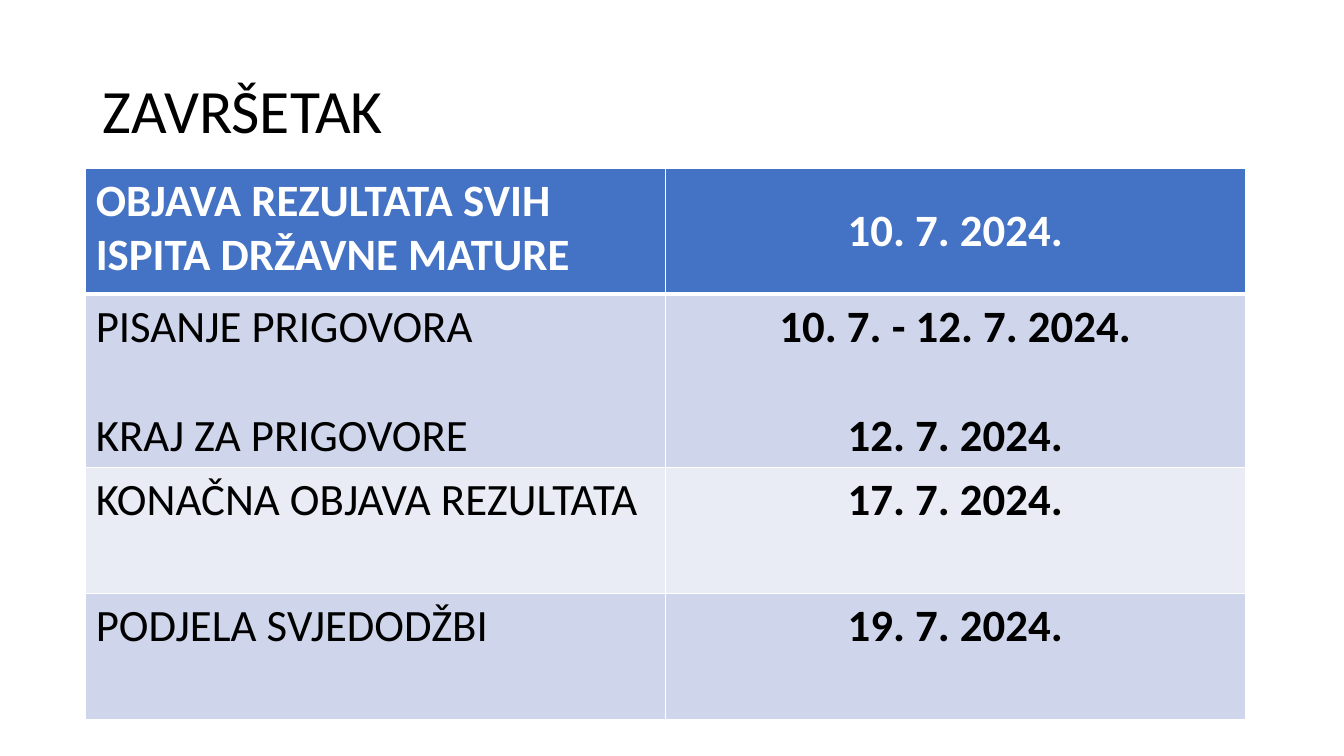
from lxml.etree import SubElement as Sub
from pptx import Presentation
from pptx.dml.color import RGBColor
from pptx.enum.text import MSO_ANCHOR as Anchor, PP_ALIGN as Align
from pptx.oxml.ns import qn
from pptx.util import Inches, Pt

BLACK = RGBColor(0, 0, 0)
WHITE = RGBColor(255, 255, 255)
BLUE = RGBColor(0x44, 0x72, 0xC4)
BANDS = [RGBColor(0xE9, 0xEB, 0xF5), RGBColor(0xCF, 0xD5, 0xEA)]

HEIGHTS = [1.25, 1.72, 1.25, 1.25]
ROWS = [
    (["OBJAVA REZULTATA SVIH ISPITA DRŽAVNE MATURE"], ["10. 7. 2024."]),
    (["PISANJE PRIGOVORA", "KRAJ ZA PRIGOVORE"],
     ["10. 7. - 12. 7. 2024.", "12. 7. 2024."]),
    (["KONAČNA OBJAVA REZULTATA"], ["17. 7. 2024."]),
    (["PODJELA SVJEDODŽBI"], ["19. 7. 2024."]),
]


def style(para, size, color, bold=False, align=Align.LEFT):
    para.alignment = align
    font = para.font
    font.name = "Calibri"
    font.size = Pt(size)
    font.bold = bold
    font.color.rgb = color


def add_title(slide, text):
    box = slide.shapes.add_textbox(
        Inches(0.92), Inches(0.4), Inches(11.5), Inches(1.45))
    frame = box.text_frame
    frame.word_wrap = True
    frame.vertical_anchor = Anchor.MIDDLE
    para = frame.paragraphs[0]
    para.text = text
    para.line_spacing = 0.9
    style(para, 44, BLACK)


def add_edges(cell, row):
    """Draw white cell borders, thick between the header and the body."""
    widths = {"L": 1, "R": 1, "T": 3 if row == 1 else 1,
              "B": 3 if row == 0 else 1}
    props = cell._tc.get_or_add_tcPr()
    for side, width in widths.items():
        line = Sub(props, qn(f"a:ln{side}"), w=str(Pt(width)))
        Sub(Sub(line, qn("a:solidFill")), qn("a:srgbClr"), val=str(WHITE))


def fill_cell(cell, lines, row, col):
    head = row == 0
    add_edges(cell, row)
    cell.fill.solid()
    cell.fill.fore_color.rgb = BLUE if head else BANDS[row % 2]
    if head and col == 1:
        cell.vertical_anchor = Anchor.MIDDLE
    frame = cell.text_frame
    for i, text in enumerate(lines):
        para = frame.add_paragraph() if i else frame.paragraphs[0]
        para.text = text
        if i:
            para.space_before = Pt(39)
        style(para, 32, WHITE if head else BLACK, head or col == 1,
              Align.CENTER if col else Align.LEFT)


def add_dates(slide):
    table = slide.shapes.add_table(
        len(ROWS), 2, Inches(0.85), Inches(1.67),
        Inches(11.5), Inches(sum(HEIGHTS))).table
    for r, (height, cells) in enumerate(zip(HEIGHTS, ROWS)):
        table.rows[r].height = Inches(height)
        for c, lines in enumerate(cells):
            fill_cell(table.cell(r, c), lines, r, c)


def main():
    deck = Presentation()
    deck.slide_width = Inches(13.33)
    deck.slide_height = Inches(7.5)
    slide = deck.slides.add_slide(deck.slide_layouts[6])
    add_title(slide, "ZAVRŠETAK")
    add_dates(slide)
    deck.save("out.pptx")


if __name__ == "__main__":
    main()
